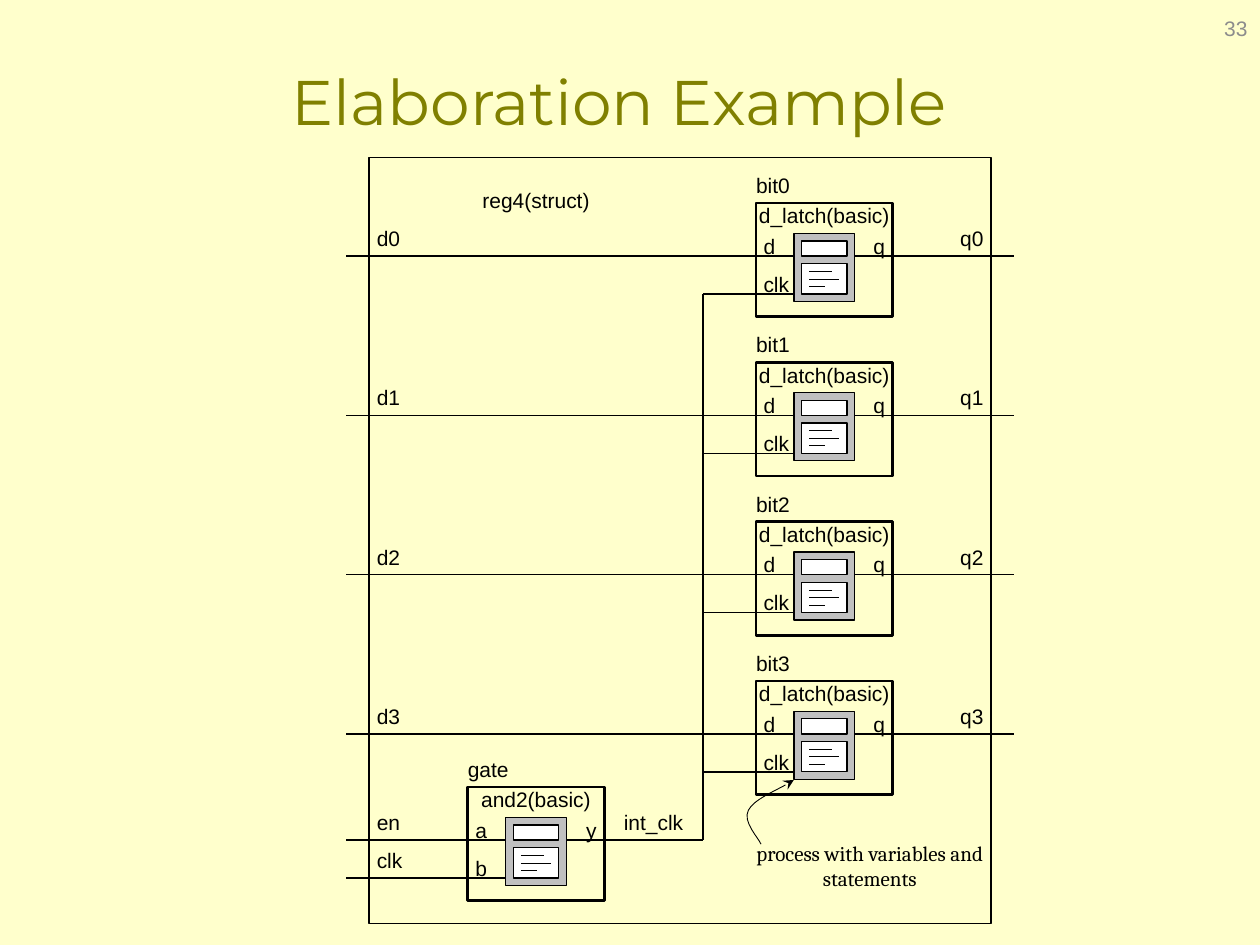
from dataclasses import dataclass
from typing import NamedTuple

from lxml.etree import SubElement
from pptx import Presentation
from pptx.dml.color import RGBColor
from pptx.enum.shapes import MSO_CONNECTOR as CONN, MSO_SHAPE as SHAPE
from pptx.enum.text import MSO_ANCHOR as ANCHOR, PP_ALIGN as ALIGN
from pptx.oxml.ns import qn
from pptx.util import Inches, Pt


@dataclass(frozen=True)
class Theme:
    paper: str = "FFFFCC"
    title: str = "808000"
    ink: str = "000000"
    number: str = "8C8C8C"
    process: str = "C0C0C0"
    white: str = "FFFFFF"
    title_font: str = "Montserrat"
    font: str = "Arial"
    note_font: str = "Cambria"
    title_size: float = 36
    size: float = 12
    hair: float = 0.25
    thin: float = 0.5
    wire: float = 0.75
    bold: float = 1.5


class Block(NamedTuple):
    """An instance of a design entity; col and row are its top left corner."""
    name: str
    entity: str
    col: int
    row: int
    inputs: tuple[str, str]
    output: str


T = Theme()
WIDTH, HEIGHT = 10, 7.5

# Grid: columns and rows count from the top left corner of the outer frame
LEFT, TOP, UNIT = 2.93, 1.25, 0.0602
FRAME_COLS, FRAME_ROWS = 82, 101
BLOCK_COLS, BLOCK_ROWS = 18, 15
PIN_ROWS = (7, 12)
STUB = 3
BUS_COL = 44
PORT_IN, PORT_OUT = -3, 85

LATCHES = [Block(f"bit{i}", "d_latch(basic)", 51, 6 + 21 * i, ("d", "clk"), "q")
           for i in range(4)]
GATE = Block("gate", "and2(basic)", 13, 83, ("a", "b"), "y")


def x(col: float) -> int:
    return Inches(LEFT + col * UNIT)


def y(row: float) -> int:
    return Inches(TOP + row * UNIT)


def area(col: float, row: float, cols: float, rows: float) -> tuple[int, ...]:
    return x(col), y(row), Inches(cols * UNIT), Inches(rows * UNIT)


def share(left: float, top: float, width: float, height: float) -> tuple[int, ...]:
    return (Inches(left * WIDTH), Inches(top * HEIGHT),
            Inches(width * WIDTH), Inches(height * HEIGHT))


def add_text(s, box: tuple[int, ...], text: str, *, font: str = T.font,
             size: float = T.size, color: str = T.ink, align=ALIGN.LEFT,
             anchor=ANCHOR.TOP, wrap: bool = False, inset: bool = False) -> None:
    tf = s.shapes.add_textbox(*box).text_frame
    tf.word_wrap = wrap
    tf.vertical_anchor = anchor
    if not inset:
        tf.margin_left = tf.margin_right = tf.margin_top = tf.margin_bottom = 0
    p = tf.paragraphs[0]
    p.alignment = align
    r = p.add_run()
    r.text = text
    r.font.name, r.font.size = font, Pt(size)
    r.font.color.rgb = RGBColor.from_string(color)


def add_line(s, start: tuple[float, float], end: tuple[float, float],
             weight: float = T.wire) -> None:
    line = s.shapes.add_connector(CONN.STRAIGHT, x(start[0]), y(start[1]),
                                  x(end[0]), y(end[1]))
    line.line.color.rgb = RGBColor.from_string(T.ink)
    line.line.width = Pt(weight)
    SubElement(line._element.spPr, qn("a:effectLst"))


def style_shape(sp, weight: float, fill: str | None = None) -> None:
    sp.shadow.inherit = False
    if fill:
        sp.fill.solid()
        sp.fill.fore_color.rgb = RGBColor.from_string(fill)
    else:
        sp.fill.background()
    sp.line.color.rgb = RGBColor.from_string(T.ink)
    sp.line.width = Pt(weight)


def add_box(s, box: tuple[int, ...], weight: float = T.wire,
            fill: str | None = None) -> None:
    style_shape(s.shapes.add_shape(SHAPE.RECTANGLE, *box), weight, fill)


def add_curved_arrow(s, points: list[tuple[float, float]]) -> None:
    """Points are the start, then two controls and an end for each curve."""
    start, *rest = [(Inches(px), Inches(py)) for px, py in points]
    builder = s.shapes.build_freeform(*start)
    builder.add_line_segments(rest, close=False)
    sp = builder.convert_to_shape()
    style_shape(sp, T.thin)
    segments = list(sp._element.iter(qn("a:lnTo")))
    outline = segments[0].getparent()
    for i in range(0, len(segments), 3):
        curve = SubElement(outline, qn("a:cubicBezTo"))
        for segment in segments[i:i + 3]:
            curve.append(segment[0])
            outline.remove(segment)
    SubElement(sp.line._get_or_add_ln(), qn("a:tailEnd"), type="stealth")


def add_process(s, col: float, row: float) -> None:
    add_box(s, area(col, row, 8, 9), fill=T.process)
    add_box(s, area(col + 1, row + 1, 6, 2), fill=T.white)
    add_box(s, area(col + 1, row + 4, 6, 4), fill=T.white)
    for i, length in enumerate((3, 4, 2.1)):
        add_line(s, (col + 2, row + 5 + i), (col + 2 + length, row + 5 + i), T.hair)


def add_block(s, b: Block) -> None:
    add_text(s, area(b.col, b.row - 4, 6, 4), b.name)
    add_text(s, area(b.col, b.row, BLOCK_COLS, 4), b.entity, align=ALIGN.CENTER)
    for pin, offset in zip(b.inputs, PIN_ROWS):
        row = b.row + offset
        add_text(s, area(b.col + 1, row - 3, 4, 4), pin)
        add_line(s, (b.col + 5, row), (b.col - STUB, row))
    row = b.row + PIN_ROWS[0]
    add_text(s, area(b.col + 13, row - 3, 4, 4), b.output, align=ALIGN.RIGHT)
    add_line(s, (b.col + BLOCK_COLS + STUB, row), (b.col + 13, row))
    add_box(s, area(b.col, b.row, BLOCK_COLS, BLOCK_ROWS), T.bold)
    add_process(s, b.col + 5, b.row + 4)


def add_input_port(s, name: str, b: Block, row: int) -> None:
    add_text(s, area(1, row - 4, 6, 4), name)
    add_line(s, (b.col - STUB, row), (PORT_IN, row))


def main() -> None:
    prs = Presentation()
    prs.slide_width, prs.slide_height = Inches(WIDTH), Inches(HEIGHT)
    s = prs.slides.add_slide(prs.slide_layouts[6])
    s.background.fill.solid()
    s.background.fill.fore_color.rgb = RGBColor.from_string(T.paper)

    # Title and slide number
    add_text(s, share(0.058, 0.023, 0.867, 0.167), "Elaboration Example",
             font=T.title_font, size=T.title_size, color=T.title,
             align=ALIGN.CENTER, anchor=ANCHOR.MIDDLE, wrap=True, inset=True)
    add_text(s, share(0.767, 0.003, 0.233, 0.053), "33", color=T.number,
             align=ALIGN.RIGHT, anchor=ANCHOR.MIDDLE, wrap=True, inset=True)

    # Outer entity
    add_box(s, area(0, 0, FRAME_COLS, FRAME_ROWS))
    add_text(s, area(14, 4, 16, 3), "reg4(struct)", align=ALIGN.CENTER)

    # Latches with their data ports and clock branches
    for i, latch in enumerate(LATCHES):
        data_row, clock_row = (latch.row + offset for offset in PIN_ROWS)
        add_input_port(s, f"d{i}", latch, data_row)
        add_text(s, area(75, data_row - 4, 6, 4), f"q{i}", align=ALIGN.RIGHT)
        add_line(s, (PORT_OUT, data_row), (latch.col + BLOCK_COLS + STUB, data_row))
        add_line(s, (latch.col - STUB, clock_row), (BUS_COL, clock_row))
        add_block(s, latch)

    # Clock gate and the internal clock line
    for name, offset in zip(("en", "clk"), PIN_ROWS):
        add_input_port(s, name, GATE, GATE.row + offset)
    add_block(s, GATE)
    gate_row = GATE.row + PIN_ROWS[0]
    add_text(s, area(32, gate_row - 4, 11, 4), "int_clk", align=ALIGN.CENTER)
    add_line(s, (BUS_COL, gate_row), (GATE.col + BLOCK_COLS + STUB, gate_row))
    add_line(s, (BUS_COL, LATCHES[0].row + PIN_ROWS[1]), (BUS_COL, gate_row))

    # Note on the process symbol
    add_text(s, area(51, 90, 30, 8), "process with variables and statements",
             font=T.note_font, align=ALIGN.CENTER, wrap=True)
    add_curved_arrow(s, [(6.04, 6.7), (6.02, 6.65), (5.89, 6.52), (5.94, 6.43),
                         (5.98, 6.35), (6.23, 6.24), (6.3, 6.19)])

    prs.save("out.pptx")


if __name__ == "__main__":
    main()
